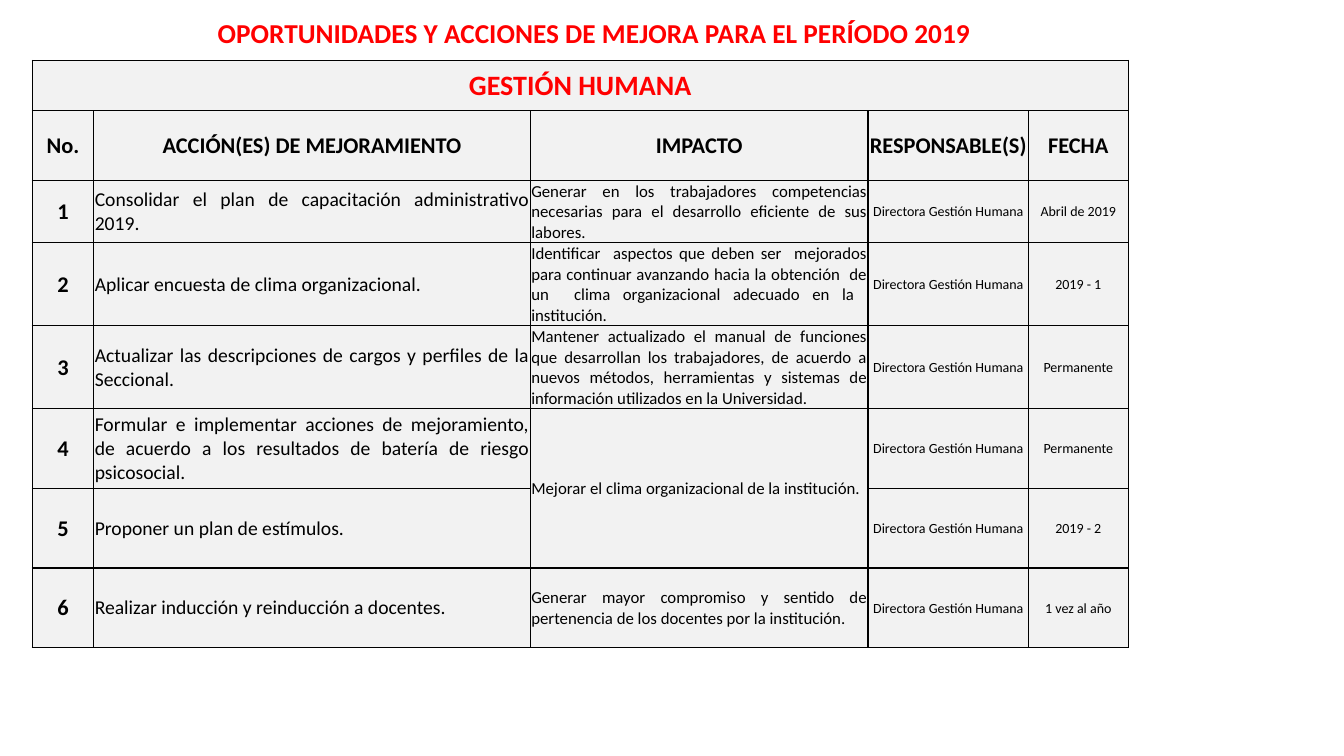
import dataclasses

import pptx
import pptx.dml.color
import pptx.enum.text
import pptx.oxml
import pptx.oxml.ns
import pptx.util

PX = 9144  # EMU in one px, 100 px to the inch
ALIGN = pptx.enum.text.PP_ALIGN
MIDDLE = pptx.enum.text.MSO_ANCHOR.MIDDLE


@dataclasses.dataclass(frozen=True)
class Theme:
    font: str = "Calibri"
    red: str = "FF0000"
    black: str = "000000"
    gray: str = "F2F2F2"
    title: float = 19.5
    band: float = 20
    head: float = 16
    action: float = 14
    impact: float = 12
    small: float = 10
    line: float = 1


def px(count):
    return pptx.util.Emu(count * PX)


def rgb(code):
    return pptx.dml.color.RGBColor.from_string(code)


def write(frame, text, font, size, color, bold=False, align=ALIGN.CENTER):
    para = frame.paragraphs[0]
    para.alignment = align
    run = para.add_run()
    run.text = text
    run.font.name = font
    run.font.size = pptx.util.Pt(size)
    run.font.color.rgb = rgb(color)
    run.font.bold = bold


class Page:
    def __init__(self, deck, theme):
        self.theme = theme
        self.slide = deck.slides.add_slide(deck.slide_layouts[5])

    def title(self, text, left, top, width, height):
        shape = self.slide.shapes.title
        shape.left, shape.top = px(left), px(top)
        shape.width, shape.height = px(width), px(height)
        frame = shape.text_frame
        frame.word_wrap = True
        frame.auto_size = pptx.enum.text.MSO_AUTO_SIZE.NONE
        frame.vertical_anchor = MIDDLE
        write(frame, text, self.theme.font, self.theme.title,
              self.theme.red, bold=True)

    def table(self, left, top, cols, rows):
        grid = self.slide.shapes.add_table(
            len(rows), len(cols), px(left), px(top),
            px(sum(cols)), px(sum(rows))).table
        grid.first_row = grid.horz_banding = False
        for col, width in zip(grid.columns, cols):
            col.width = px(width)
        for row, height in zip(grid.rows, rows):
            row.height = px(height)
        for cell in grid.iter_cells():
            self.border(cell)
            cell.fill.solid()
            cell.fill.fore_color.rgb = rgb(self.theme.gray)
            cell.vertical_anchor = MIDDLE
            cell.margin_left = cell.margin_right = cell.margin_top = px(1)
            cell.margin_bottom = 0
        return grid

    def border(self, cell):
        props = cell._tc.get_or_add_tcPr()
        width = pptx.util.Pt(self.theme.line)
        for side in "LRTB":
            props.append(pptx.oxml.parse_xml(
                f'<a:ln{side} {pptx.oxml.ns.nsdecls("a")} w="{width}">'
                f'<a:solidFill><a:srgbClr val="{self.theme.black}"/>'
                f'</a:solidFill></a:ln{side}>'))

    def cell(self, cell, text, size, color=None, **form):
        write(cell.text_frame, text, self.theme.font, size,
              color or self.theme.black, **form)


HEADS = ["No.", "ACCIÓN(ES) DE MEJORAMIENTO", "IMPACTO",
         "RESPONSABLE(S)", "FECHA"]
OWNER = "Directora Gestión Humana"
# Action, impact (None continues the cell above) and date
PLANS = [
    ("Consolidar el plan de capacitación administrativo 2019.",
     "Generar en los trabajadores competencias necesarias para el "
     "desarrollo eficiente de sus labores.", "Abril de 2019"),
    ("Aplicar encuesta de clima organizacional.",
     "Identificar  aspectos que deben ser  mejorados para continuar "
     "avanzando hacia la obtención  de un  clima organizacional adecuado "
     "en la  institución. ", "2019 - 1"),
    ("Actualizar las descripciones de cargos y perfiles de la Seccional.",
     "Mantener actualizado el manual de funciones que desarrollan los "
     "trabajadores, de acuerdo a nuevos métodos, herramientas y sistemas "
     "de información utilizados en la Universidad.", "Permanente"),
    ("Formular e implementar acciones de mejoramiento, de acuerdo a los "
     "resultados de batería de riesgo psicosocial.",
     "Mejorar el clima organizacional de la institución.", "Permanente"),
    ("Proponer un plan de estímulos.", None, "2019 - 2"),
    ("Realizar inducción y reinducción a docentes.",
     "Generar mayor compromiso y sentido de pertenencia de los docentes "
     "por la institución.", "1 vez al año"),
]


def main():
    deck = pptx.Presentation()
    deck.slide_width, deck.slide_height = px(1333), px(750)
    theme = Theme()
    page = Page(deck, theme)

    # Title
    page.title("OPORTUNIDADES Y ACCIONES DE MEJORA PARA EL PERÍODO 2019",
               58, 5, 1063, 55)

    # Table band and heads
    grid = page.table(32, 60, [61, 433, 335, 159, 99],
                      [50, 69, 59, 73] + [79] * 4)
    grid.cell(0, 0).merge(grid.cell(0, len(HEADS) - 1))
    page.cell(grid.cell(0, 0), "GESTIÓN HUMANA", theme.band, theme.red,
              bold=True)
    for col, head in enumerate(HEADS):
        page.cell(grid.cell(1, col), head, theme.head, bold=True)

    # Plan rows
    for num, (action, impact, date) in enumerate(PLANS, 1):
        row = num + 1
        page.cell(grid.cell(row, 0), str(num), theme.head, bold=True)
        page.cell(grid.cell(row, 1), action, theme.action,
                  align=ALIGN.JUSTIFY)
        if impact is None:
            grid.cell(row - 1, 2).merge(grid.cell(row, 2))
        else:
            page.cell(grid.cell(row, 2), impact, theme.impact,
                      align=ALIGN.JUSTIFY)
        page.cell(grid.cell(row, 3), OWNER, theme.small)
        page.cell(grid.cell(row, 4), date, theme.small)

    deck.save("out.pptx")


if __name__ == "__main__":
    main()
